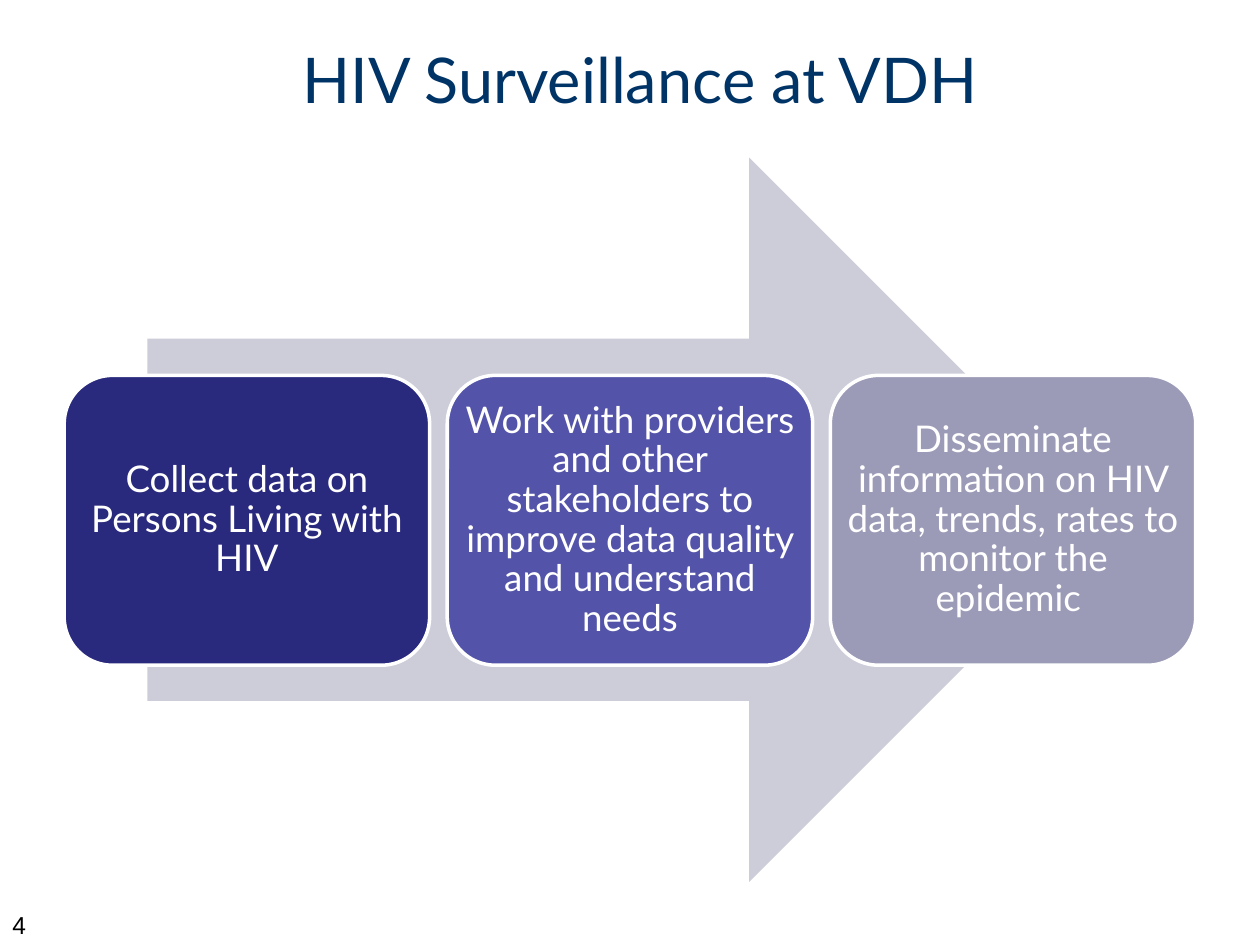
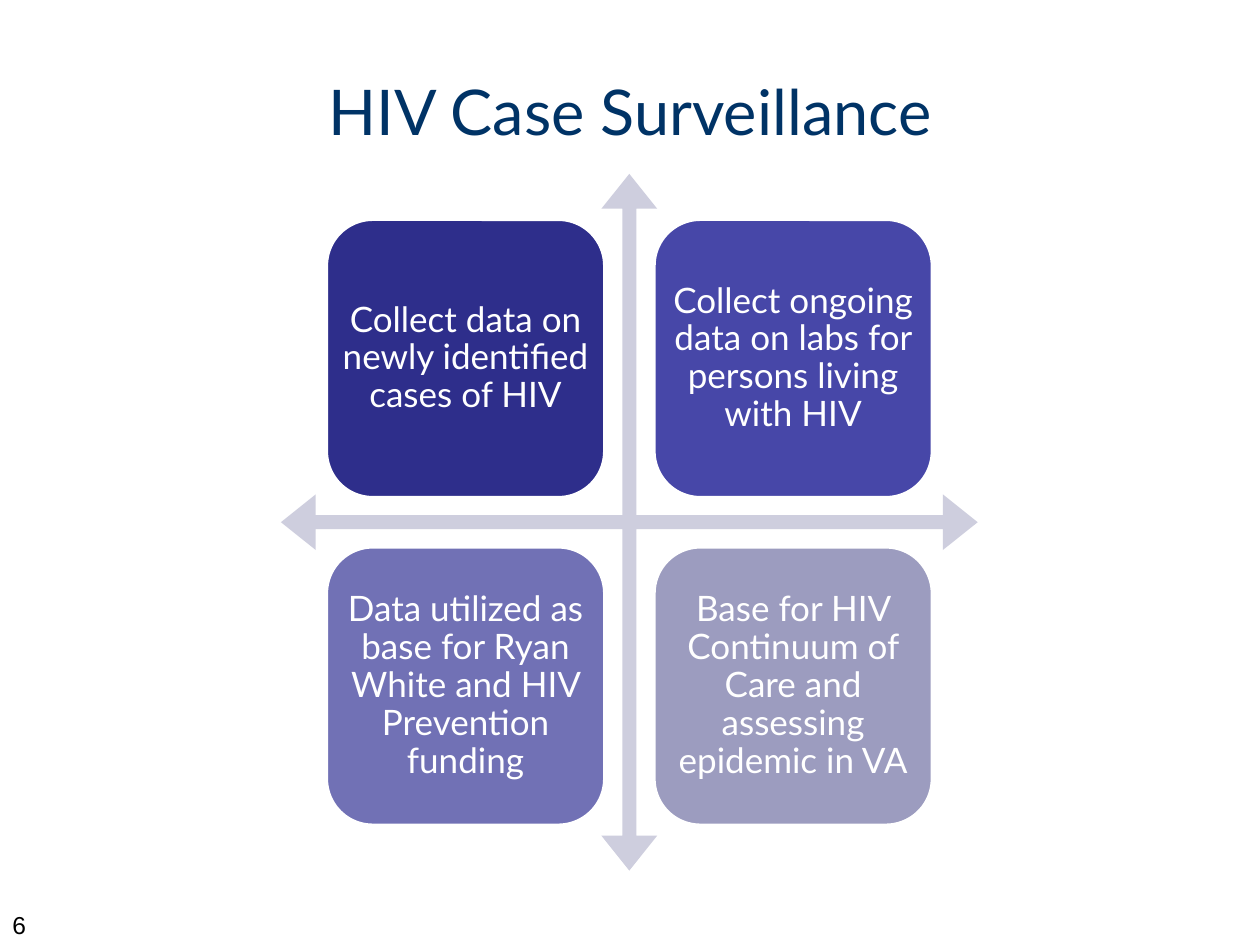
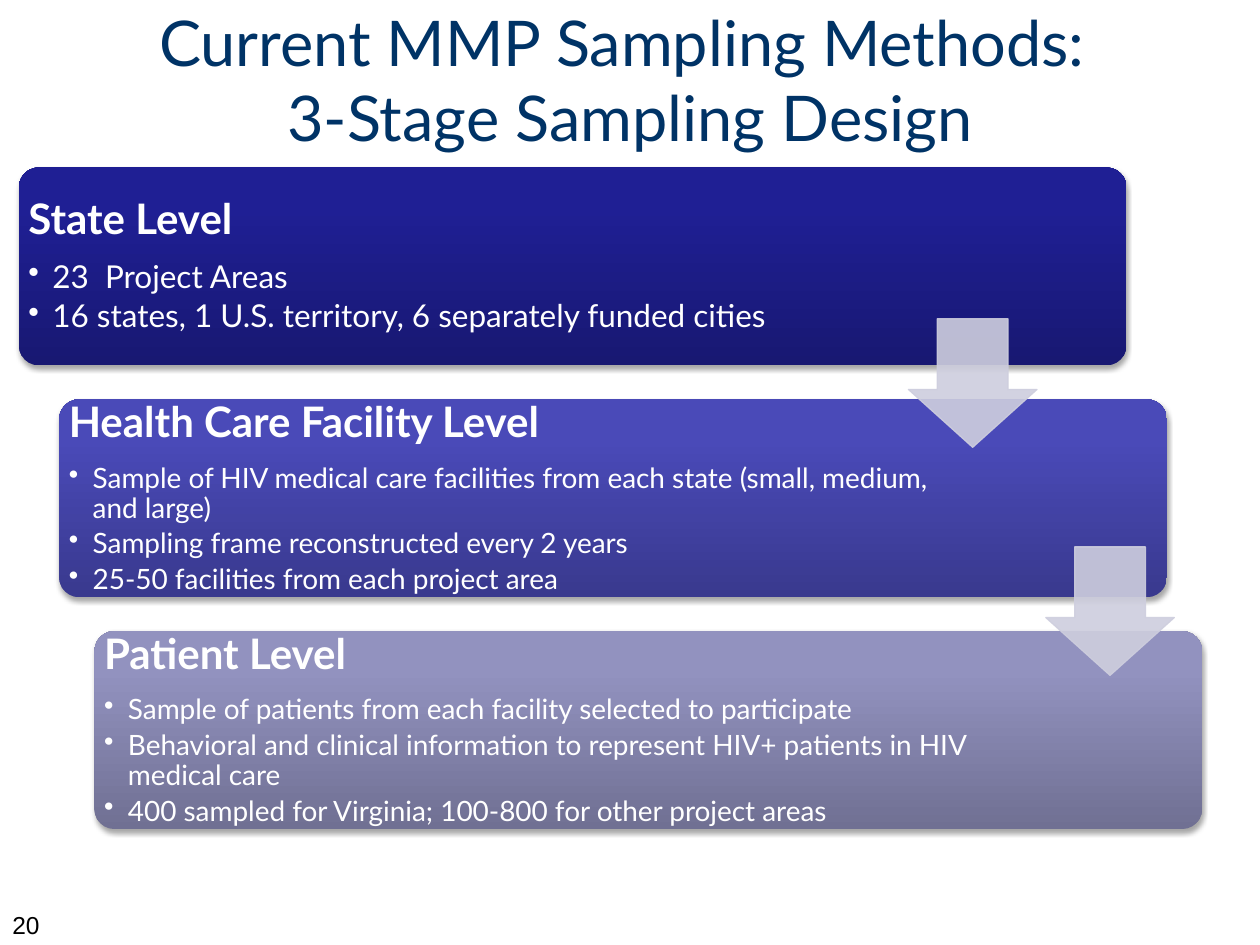
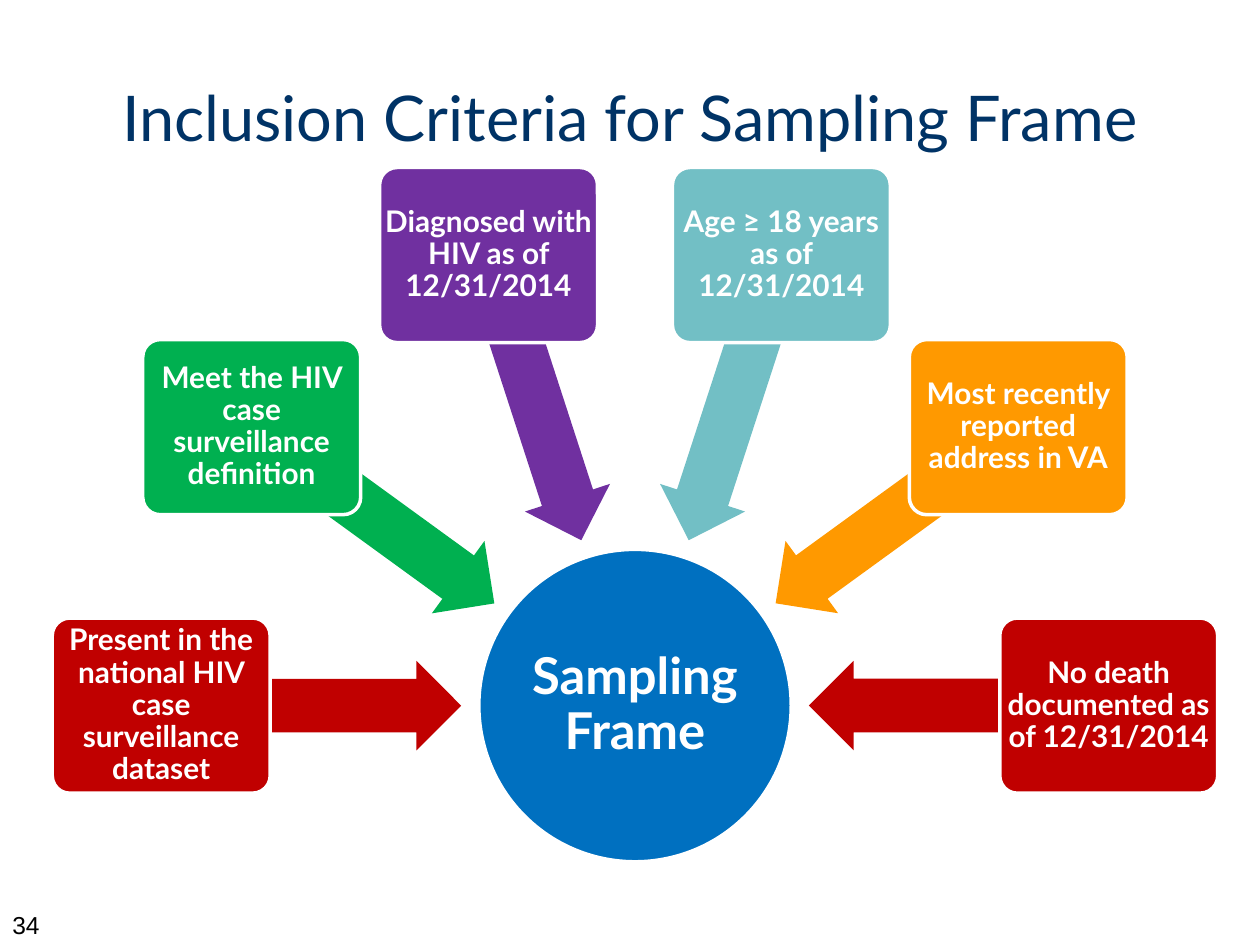
import math
from copy import deepcopy

from lxml import etree
from pptx import Presentation
from pptx.dml.color import RGBColor
from pptx.enum import shapes, text
from pptx.oxml.ns import qn
from pptx.util import Inches, Pt

FONT = "Lato"
SHAPE = shapes.MSO_SHAPE
CENTER = text.PP_ALIGN.CENTER
COLORS = {
    "title": "003366", "white": "FFFFFF", "black": "000000",
    "band": "CDCDDA", "pale": "CECEDE",
    "collect": "29297D", "work": "5353A9", "share": "9B9BB8",
    "new_cases": "2E2E8B", "labs": "4747A8", "funding": "7171B5", "continuum": "9C9CBF",
    "blue": "0070C0", "red": "C00000", "green": "00B050",
    "purple": "7030A0", "teal": "72BFC5", "orange": "FF9900",
}


def rgb(name):
    return RGBColor.from_string(COLORS.get(name, name))


# Text
def write(tf, content, size=20, color="white", font=FONT, bold=False, align=None,
          spacing=None, after=None, bullet=False):
    """Write one paragraph, using the empty first one if there is one."""
    p = tf.paragraphs[0]
    if p.runs:
        p = tf.add_paragraph()
    if align is not None:
        p.alignment = align
    if spacing:
        p.line_spacing = spacing
    if after:
        p.space_after = Pt(after)
    if bullet:
        p.level = 1
        pPr = p._p.get_or_add_pPr()
        pPr.set("marL", str(Inches(0.19)))
        pPr.set("indent", str(-Inches(0.19)))
        etree.SubElement(pPr, qn("a:buChar")).set("char", "•")
    p.text = content
    for r in p.runs:
        r.font.name, r.font.size, r.font.bold = font, Pt(size), bold
        r.font.color.rgb = rgb(color)


def set_frame(tf, anchor=text.MSO_ANCHOR.MIDDLE, margins=(0, 0, 0, 0)):
    tf.word_wrap = True
    tf.auto_size = text.MSO_AUTO_SIZE.NONE
    tf.vertical_anchor = anchor
    tf.margin_left, tf.margin_top, tf.margin_right, tf.margin_bottom = map(Inches, margins)


# Shapes
def add_shape(slide, kind, at, fill=None, line=None, line_width=2, adj=(), rotation=0):
    sp = slide.shapes.add_shape(kind, *map(Inches, at))
    sp.shadow.inherit = False
    sp.rotation = rotation
    for i, value in enumerate(adj):
        sp.adjustments[i] = value
    if fill:
        sp.fill.solid()
        sp.fill.fore_color.rgb = rgb(fill)
    if line:
        sp.line.color.rgb = rgb(line)
        sp.line.width = Pt(line_width)
    else:
        sp.line.fill.background()
    return sp


def add_label(slide, kind, at, content, fill, size, bold=False, adj=()):
    sp = add_shape(slide, kind, at, fill, line="white", adj=adj)
    set_frame(sp.text_frame)
    write(sp.text_frame, content, size=size, bold=bold, align=CENTER, spacing=0.9)


def set_gradient(sp, stops):
    sp.fill.gradient()
    sp.fill.gradient_angle = 90
    gs_list = sp._element.spPr.find(qn("a:gradFill")).find(qn("a:gsLst"))
    gs_list.append(deepcopy(gs_list[-1]))
    for gs, (position, color) in zip(gs_list, stops):
        gs.set("pos", str(position * 1000))
        for child in list(gs):
            gs.remove(child)
        etree.SubElement(gs, qn("a:srgbClr")).set("val", color)


def set_shadow(sp):
    effects = sp._element.spPr.find(qn("a:effectLst"))
    shadow = etree.SubElement(effects, qn("a:outerShdw"), blurRad=str(Pt(3.1)),
                              dist=str(Pt(1.8)), dir="5400000", rotWithShape="0")
    color = etree.SubElement(shadow, qn("a:srgbClr"), val=COLORS["black"])
    etree.SubElement(color, qn("a:alpha"), val="35000")


def set_opacity(sp, percent):
    for color in sp._element.spPr.iter(qn("a:srgbClr")):
        etree.SubElement(color, qn("a:alpha"), val=str(percent * 1000))


# Title and page number shared by all slides
def add_slide(prs, title, number, at):
    slide = prs.slides.add_slide(prs.slide_layouts[5])
    sp = slide.shapes.title
    sp.left, sp.top, sp.width, sp.height = map(Inches, at)
    set_frame(sp.text_frame, margins=(0.1, 0.05, 0.1, 0.05))
    write(sp.text_frame, title, size=36, color="title", align=CENTER)
    box = slide.shapes.add_textbox(*map(Inches, (0, 7.17, 2.33, 0.25)))
    set_frame(box.text_frame, text.MSO_ANCHOR.TOP, (0.1, 0.05, 0.1, 0.05))
    write(box.text_frame, str(number), size=14, color="black", font="Arial")
    return slide


def build_process(prs):
    slide = add_slide(prs, "HIV Surveillance at VDH", 4, (0.58, 0, 9, 1.25))
    add_shape(slide, SHAPE.RIGHT_ARROW, (1.17, 1.25, 7.65, 5.75), "band")
    steps = [
        ("Collect data on Persons Living with HIV", "collect"),
        ("Work with providers and other stakeholders to improve data quality "
         "and understand needs", "work"),
        ("Disseminate information on HIV data, trends, rates to monitor the epidemic ", "share"),
    ]
    for i, (content, fill) in enumerate(steps):
        add_label(slide, SHAPE.ROUNDED_RECTANGLE, (0.51 + 3.04 * i, 2.98, 2.9, 2.3),
                  content, fill, size=21)


def build_matrix(prs):
    slide = add_slide(prs, "HIV Case Surveillance", 6, (0.5, 0.25, 9, 1.25))
    add_shape(slide, SHAPE.QUAD_ARROW, (2.23, 1.38, 5.53, 5.53), "pale", adj=(0.02, 0.04, 0.05))
    quadrants = [
        ("Collect data on newly identified cases of HIV", "new_cases"),
        ("Collect ongoing data on labs for persons living with HIV", "labs"),
        ("Data utilized as base for Ryan White and HIV Prevention funding", "funding"),
        ("Base for HIV Continuum of Care and assessing epidemic in VA", "continuum"),
    ]
    for i, (content, fill) in enumerate(quadrants):
        row, col = divmod(i, 2)
        add_label(slide, SHAPE.ROUNDED_RECTANGLE,
                  (2.59 + 2.6 * col, 1.74 + 2.6 * row, 2.21, 2.21), content, fill, size=20)


def build_stages(prs):
    slide = add_slide(prs, "Current MMP Sampling Methods: \v3-Stage Sampling Design", 20,
                      (0, 0, 10, 1.25))
    # left, text width, bullet size, gradient colours, heading, bullets
    stages = [
        (0.15, 7.26, 18, ("181872", "1F1F94", "1D1D97"), "State Level",
         ["23  Project Areas",
          "16 states, 1 U.S. territory, 6 separately funded cities"]),
        (0.47, 7.04, 16, ("39398E", "4A4AB8", "4848BB"), "Health Care Facility Level",
         ["Sample of HIV medical care facilities from each state (small, medium, and large)",
          "Sampling frame reconstructed every 2 years",
          "25-50 facilities from each project area"]),
        (0.75, 7.04, 16, ("707093", "9292BF", "9191C0"), "Patient Level",
         ["Sample of patients from each facility selected to participate",
          "Behavioral and clinical information to represent HIV+ patients in HIV medical care",
          "400 sampled for Virginia; 100-800 for other project areas"]),
    ]
    width = 8.79
    for i, (left, text_width, size, gradient, heading, bullets) in enumerate(stages):
        sp = add_shape(slide, SHAPE.ROUNDED_RECTANGLE, (left, 1.33 + 1.84 * i, width, 1.57),
                       adj=(0.1,))
        set_gradient(sp, zip((0, 80, 100), gradient))
        set_shadow(sp)
        tf = sp.text_frame
        set_frame(tf, margins=(0.03, 0.03, width - text_width + 0.03, 0.03))
        left_align = text.PP_ALIGN.LEFT
        write(tf, heading, size=24, bold=True, align=left_align, spacing=0.9, after=10)
        for bullet in bullets:
            write(tf, bullet, size=size, align=left_align, spacing=0.9, after=3, bullet=True)
    # Arrows between stages
    for left, top in [(7.21, 2.53), (8.3, 4.34)]:
        arrow = add_shape(slide, SHAPE.DOWN_ARROW, (left, top, 1.02, 1.02), "pale",
                          line="pale", line_width=0.75, adj=(0.55, 0.45))
        set_opacity(arrow, 90)


def build_criteria(prs):
    slide = add_slide(prs, "Inclusion Criteria for Sampling Frame", 34, (0.5, 0.3, 9, 1.25))
    hub_x, hub_y = 5.04, 5.6

    def around_hub(angle, radius, width, height):
        x = hub_x + radius * math.cos(math.radians(angle))
        y = hub_y + radius * math.sin(math.radians(angle))
        return x - width / 2, y - height / 2, width, height

    add_label(slide, SHAPE.OVAL, around_hub(0, 0, 2.48, 2.48), "Sampling Frame", "blue",
              size=29, bold=True)
    criteria = [
        ("Present in the national HIV case surveillance dataset", "red"),
        ("Meet the HIV case surveillance definition", "green"),
        ("Diagnosed with HIV as of 12/31/2014", "purple"),
        ("Age ≥ 18 years as of 12/31/2014", "teal"),
        ("Most recently reported address in VA", "orange"),
        ("No death documented as of 12/31/2014", "red"),
    ]
    for i, (content, fill) in enumerate(criteria):
        angle = 180 + 36 * i
        add_shape(slide, SHAPE.LEFT_ARROW, around_hub(angle, 2.57, 2.38, 0.71), fill,
                  adj=(0.6, 0.5), rotation=angle % 360)
        add_label(slide, SHAPE.ROUNDED_RECTANGLE, around_hub(angle, 3.76, 1.73, 1.39),
                  content, fill, size=17, bold=True, adj=(0.1,))


def main():
    prs = Presentation()
    prs.slide_width, prs.slide_height = Inches(10), Inches(7.5)
    build_process(prs)
    build_matrix(prs)
    build_stages(prs)
    build_criteria(prs)
    prs.save("out.pptx")


if __name__ == "__main__":
    main()
